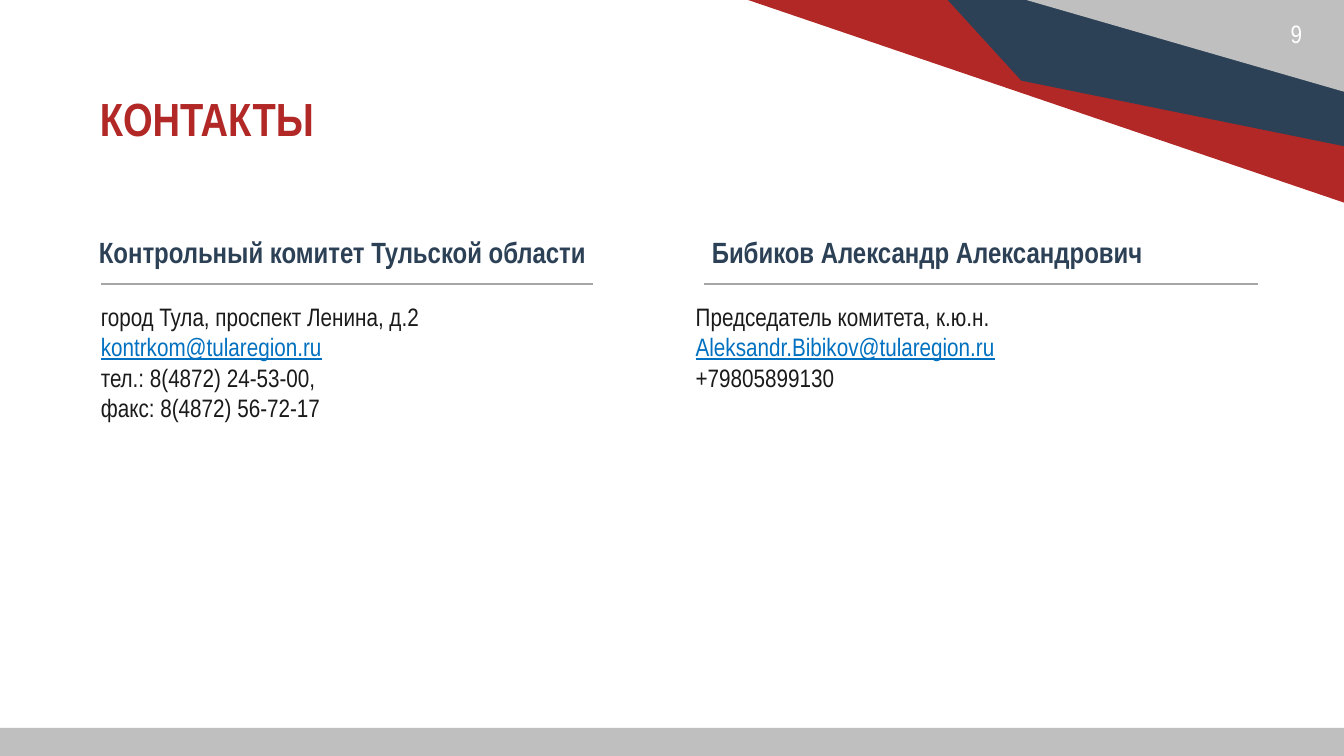
from dataclasses import dataclass

from lxml import etree
from pptx import Presentation
from pptx import util as u
from pptx.dml.color import RGBColor
from pptx.enum import shapes, text

WIDTH, HEIGHT = 13.33, 7.5


@dataclass(frozen=True)
class Theme:
    font: str = "Arial Narrow"
    red: str = "B12826"
    navy: str = "2C4156"
    grey: str = "BFBFBF"
    rule: str = "A6A6A6"
    ink: str = "1A1A1A"
    link: str = "0070C0"
    white: str = "FFFFFF"
    title_size: float = 33.2
    heading_size: float = 20.9
    body_size: float = 18


@dataclass(frozen=True)
class Box:
    left: float
    top: float
    width: float
    height: float

    def inches(self):
        return [u.Inches(v) for v in (self.left, self.top, self.width, self.height)]


THEME = Theme()


def paint(shape, color):
    shape.shadow.inherit = False
    shape.fill.solid()
    shape.fill.fore_color.rgb = RGBColor.from_string(color)
    shape.line.fill.background()


def prepare_frame(frame):
    frame.word_wrap = True
    frame.auto_size = text.MSO_AUTO_SIZE.NONE
    frame.vertical_anchor = text.MSO_ANCHOR.TOP
    frame.margin_left = frame.margin_right = 0
    frame.margin_top = frame.margin_bottom = 0


def add_run(paragraph, words, size, color, bold=False, underline=False):
    paragraph.alignment = text.PP_ALIGN.LEFT
    run = paragraph.add_run()
    run.text = words
    run.font.name = THEME.font
    run.font.size = u.Pt(size)
    run.font.bold = bold
    run.font.underline = underline
    run.font.color.rgb = RGBColor.from_string(color)


def add_text_box(slide, box):
    frame = slide.shapes.add_textbox(*box.inches()).text_frame
    prepare_frame(frame)
    return frame


def add_footer_band(slide, box):
    band = slide.shapes.add_shape(shapes.MSO_SHAPE.RECTANGLE, *box.inches())
    paint(band, THEME.grey)


def add_corner(slide, box, page):
    """Layered ribbons, with points as offsets from the box's top left."""
    ribbons = [
        (THEME.red, [(0, 0), (box.width, 0), (box.width, 2.01)]),
        (THEME.navy, [(1.98, 0), (box.width, 0), (box.width, 1.45), (2.71, 0.8)]),
        (THEME.grey, [(2.76, 0), (box.width, 0), (box.width, 0.91)]),
    ]
    for color, offsets in ribbons:
        points = [(u.Inches(box.left + x), u.Inches(box.top + y)) for x, y in offsets]
        builder = slide.shapes.build_freeform(*points[0])
        builder.add_line_segments(points[1:], close=True)
        paint(builder.convert_to_shape(), color)
    # Page number
    frame = add_text_box(slide, Box(box.left + 5.38, box.top + 0.18, 0.5, 0.3))
    add_run(frame.paragraphs[0], page, THEME.body_size, THEME.white)


def add_title(slide, box, words):
    title = slide.shapes.title
    title.left, title.top, title.width, title.height = box.inches()
    prepare_frame(title.text_frame)
    paragraph = title.text_frame.paragraphs[0]
    paragraph.line_spacing = 0.93
    add_run(paragraph, words, THEME.title_size, THEME.red, bold=True)


def add_contact(slide, box, heading, details, heading_shift, details_shift):
    # Heading
    frame = add_text_box(
        slide, Box(box.left + heading_shift, box.top, box.width + 0.17, 0.35))
    add_run(frame.paragraphs[0], heading, THEME.heading_size, THEME.navy, bold=True)
    # Rule
    level = u.Inches(box.top + 0.5)
    rule = slide.shapes.add_connector(
        shapes.MSO_CONNECTOR.STRAIGHT, u.Inches(box.left), level,
        u.Inches(box.left + box.width), level)
    rule.line.color.rgb = RGBColor.from_string(THEME.rule)
    rule.line.width = u.Pt(1.75)
    properties = rule.element.spPr
    etree.SubElement(
        properties, "{http://schemas.openxmlformats.org/drawingml/2006/main}effectLst")
    # Details
    frame = add_text_box(
        slide, Box(box.left + details_shift, box.top + 0.67, box.width, box.height - 0.67))
    for index, line in enumerate(details):
        paragraph = frame.add_paragraph() if index else frame.paragraphs[0]
        is_mail = "@" in line
        add_run(paragraph, line, THEME.body_size,
                THEME.link if is_mail else THEME.ink, underline=is_mail)


def build_contacts_slide(presentation):
    slide = presentation.slides.add_slide(presentation.slide_layouts[5])
    add_footer_band(slide, Box(0, HEIGHT - 0.28, WIDTH, 0.28))
    add_corner(slide, Box(7.42, 0, WIDTH - 7.42, 2.01), "9")
    add_title(slide, Box(0.99, 0.94, 11.49, 0.85), "КОНТАКТЫ")
    add_contact(
        slide, Box(1, 2.32, 4.88, 2.15), "Контрольный комитет Тульской области",
        ["город Тула, проспект Ленина, д.2", "kontrkom@tularegion.ru",
         "тел.: 8(4872) 24-53-00,", "факс: 8(4872) 56-72-17"],
        heading_shift=-0.02, details_shift=0)
    add_contact(
        slide, Box(6.98, 2.32, 5.5, 2.15), "Бибиков Александр Александрович",
        ["Председатель комитета, к.ю.н.", "Аleksandr.Bibikov@tularegion.ru",
         "+79805899130"],
        heading_shift=0.08, details_shift=-0.08)


def main():
    presentation = Presentation()
    presentation.slide_width = u.Inches(WIDTH)
    presentation.slide_height = u.Inches(HEIGHT)
    build_contacts_slide(presentation)
    presentation.save("out.pptx")


if __name__ == "__main__":
    main()
